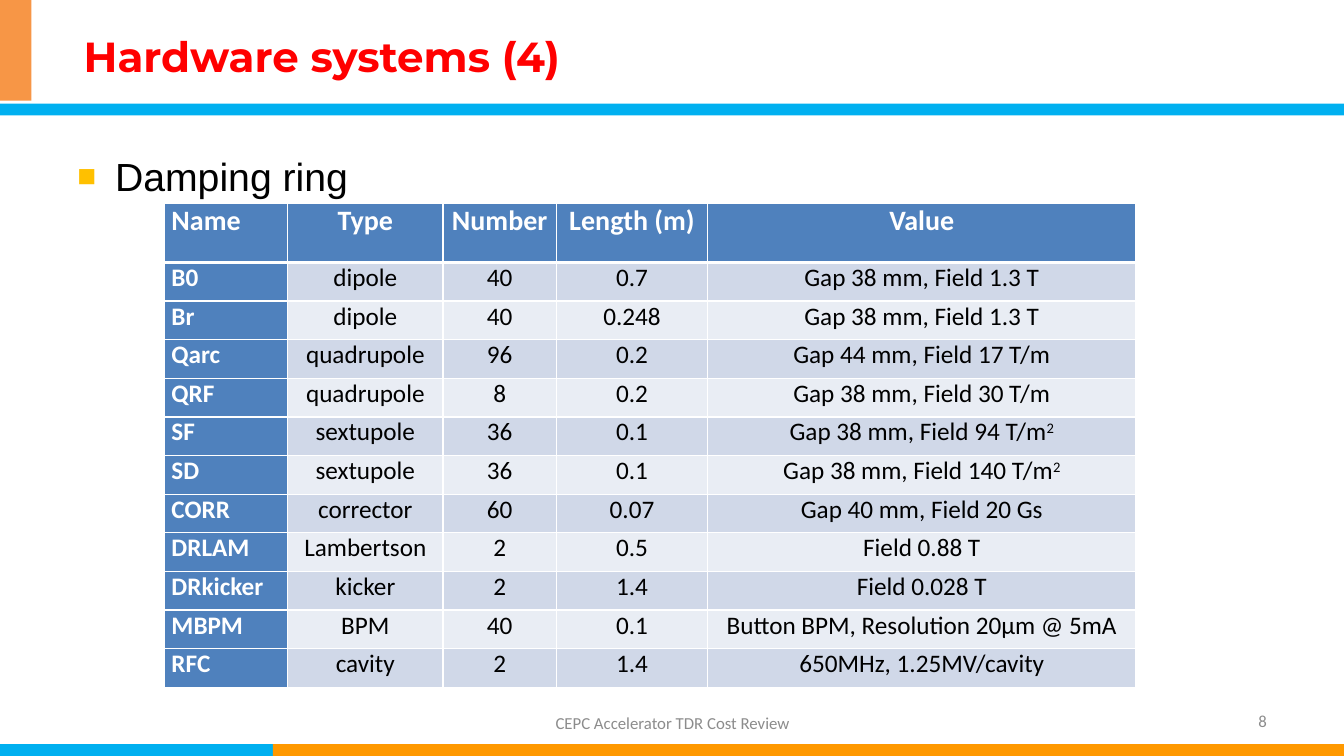
from lxml import etree
from pptx import Presentation
from pptx.dml.color import RGBColor
from pptx.enum import shapes, text
from pptx.oxml import ns
from pptx.util import Pt

COLORS = {
    "sky": "00B0F0", "amber": "FF9900", "orange": "F79646", "red": "FF0000",
    "gold": "FFC000", "black": "000000", "white": "FFFFFF", "grey": "8C8C8C",
    "header": "4F81BD", "band": "D0D8E8", "pale": "E9EDF4",
}
ALIGN = text.PP_ALIGN
MAGNETS = [
    ("Name", "Type", "Number", "Length (m)", "Value"),
    ("B0", "dipole", "40", "0.7", "Gap 38 mm, Field 1.3 T"),
    ("Br", "dipole", "40", "0.248", "Gap 38 mm, Field 1.3 T"),
    ("Qarc", "quadrupole", "96", "0.2", "Gap 44 mm, Field 17 T/m"),
    ("QRF", "quadrupole", "8", "0.2", "Gap 38 mm, Field 30 T/m"),
    ("SF", "sextupole", "36", "0.1", "Gap 38 mm, Field 94 T/m^2"),
    ("SD", "sextupole", "36", "0.1", "Gap 38 mm, Field 140 T/m^2"),
    ("CORR", "corrector", "60", "0.07", "Gap 40 mm, Field 20 Gs"),
    ("DRLAM", "Lambertson", "2", "0.5", "Field 0.88 T"),
    ("DRkicker", "kicker", "2", "1.4", "Field 0.028 T"),
    ("MBPM", "BPM", "40", "0.1", "Button BPM, Resolution 20µm @ 5mA"),
    ("RFC", "cavity", "2", "1.4", "650MHz, 1.25MV/cavity"),
]
COLUMN_SHARES = (88, 111, 81, 108, 306)
HEADER_HEIGHT = 42


def rgb(name):
    return RGBColor.from_string(COLORS[name])


def add_run(p, words, font, size, color, bold=False):
    r = p.add_run()
    r.text = words
    r.font.name = font
    r.font.size = Pt(size)
    r.font.bold = bold
    r.font.color.rgb = rgb(color)
    return r


def place(sp, box):
    sp.left, sp.top, sp.width, sp.height = (Pt(v) for v in box)


def add_bar(s, box, color):
    sp = s.shapes.add_shape(shapes.MSO_SHAPE.RECTANGLE, *(Pt(v) for v in box))
    sp.shadow.inherit = False
    sp.fill.solid()
    sp.fill.fore_color.rgb = rgb(color)
    sp.line.fill.background()


def add_frame(s, box):
    x, y, w, h = box
    bar = 8.5
    add_bar(s, (x, y + h - bar, w, bar), "sky")
    add_bar(s, (x + 195, y + h - bar, w - 195, bar), "amber")
    add_bar(s, (x, y + 74, w, bar), "sky")
    add_bar(s, (x, y, 22.5, 72), "orange")


def fill_title(s, box, words):
    sp = s.shapes.title
    place(sp, box)
    tf = sp.text_frame
    tf.auto_size = text.MSO_AUTO_SIZE.NONE
    tf.vertical_anchor = text.MSO_ANCHOR.MIDDLE
    p = tf.paragraphs[0]
    p.alignment = ALIGN.LEFT
    add_run(p, words, "Montserrat", 30, "red", True)


def fill_body(s, box, words):
    sp = s.placeholders[1]
    place(sp, box)
    tf = sp.text_frame
    tf.auto_size = text.MSO_AUTO_SIZE.NONE
    p = tf.paragraphs[0]
    p.line_spacing = 1.1
    p.space_before = Pt(0)
    pPr = p._p.get_or_add_pPr()
    pPr.set("marL", str(Pt(27)))
    pPr.set("indent", str(Pt(-27)))
    color = etree.SubElement(pPr, ns.qn("a:buClr"))
    etree.SubElement(color, ns.qn("a:srgbClr"), val=COLORS["gold"])
    etree.SubElement(pPr, ns.qn("a:buSzPct"), val="80000")
    etree.SubElement(pPr, ns.qn("a:buFont"), typeface="Arial")
    etree.SubElement(pPr, ns.qn("a:buChar"), char="■")
    add_run(p, words, "Arial", 28, "black")


def add_label(s, box, words, align):
    tf = s.shapes.add_textbox(*(Pt(v) for v in box)).text_frame
    tf.word_wrap = True
    tf.vertical_anchor = text.MSO_ANCHOR.MIDDLE
    p = tf.paragraphs[0]
    p.alignment = align
    add_run(p, words, "Calibri", 12, "grey")


def add_borders(cell, top, bottom):
    tcPr = cell._tc.get_or_add_tcPr()
    for i, (side, width) in enumerate(zip("LRTB", (1, 1, top, bottom))):
        ln = etree.Element(ns.qn(f"a:ln{side}"), w=str(Pt(width)))
        fill = etree.SubElement(ln, ns.qn("a:solidFill"))
        etree.SubElement(fill, ns.qn("a:srgbClr"), val=COLORS["white"])
        tcPr.insert(i, ln)


def fill_cell(cell, words, row, col):
    heading = row == 0 or col == 0
    cell.margin_left = cell.margin_right = Pt(5)
    cell.margin_top = cell.margin_bottom = Pt(0)
    cell.fill.solid()
    cell.fill.fore_color.rgb = rgb("header" if heading else "band" if row % 2 else "pale")
    add_borders(cell, 3 if row == 1 else 1, 3 if row == 0 else 1)
    p = cell.text_frame.paragraphs[0]
    p.alignment = ALIGN.CENTER if col else ALIGN.LEFT
    style = ("Calibri", 18 if row else 20, "white" if heading else "black", heading)
    base, _, power = words.partition("^")
    add_run(p, base, *style)
    if power:
        r = add_run(p, power, *style)
        r._r.get_or_add_rPr().set("baseline", "30000")


def add_magnet_table(s, box):
    rows, cols = len(MAGNETS), len(COLUMN_SHARES)
    table = s.shapes.add_table(rows, cols, *(Pt(v) for v in box)).table
    table.horz_banding = False
    for column, share in zip(table.columns, COLUMN_SHARES):
        column.width = Pt(box[2] * share / sum(COLUMN_SHARES))
    for i, record in enumerate(MAGNETS):
        body_height = (box[3] - HEADER_HEIGHT) / (rows - 1)
        table.rows[i].height = Pt(body_height if i else HEADER_HEIGHT)
        for j, words in enumerate(record):
            fill_cell(table.cell(i, j), words, i, j)


def build_slide(prs, box):
    s = prs.slides.add_slide(prs.slide_layouts[1])
    x, y, w, h = box
    add_frame(s, box)
    fill_title(s, (x + 52.5, y + 11.5, 847.5, 57), "Hardware systems (4)")
    fill_body(s, (x + 48, y + 101.5, w - 96, 381), "Damping ring")
    add_magnet_table(s, (x + 117.5, y + 145.5, 694, 345.6))
    add_label(s, (x + 282, y + 502.5, 397, 28), "CEPC Accelerator TDR Cost Review", ALIGN.CENTER)
    add_label(s, (x + 688, y + 500.5, 224, 28.8), "8", ALIGN.RIGHT)


def main():
    prs = Presentation()
    prs.slide_width, prs.slide_height = Pt(960), Pt(540)
    build_slide(prs, (0, 0, 960, 540))
    prs.save("out.pptx")


if __name__ == "__main__":
    main()
